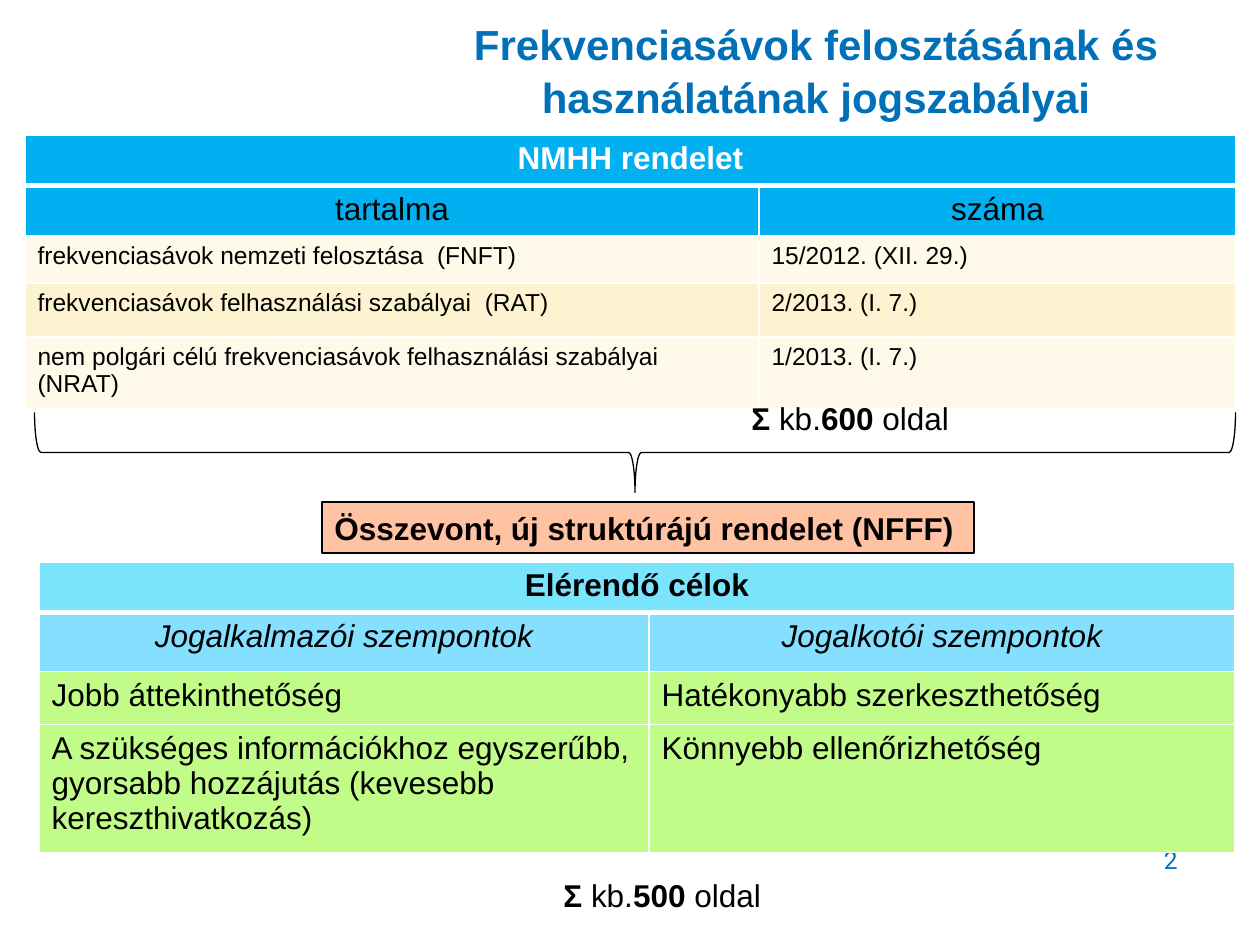
from dataclasses import dataclass
from typing import NamedTuple

from lxml import etree
from pptx import Presentation
from pptx.dml.color import RGBColor
from pptx.enum.shapes import MSO_SHAPE
from pptx.enum.text import MSO_ANCHOR, PP_ALIGN
from pptx.oxml.ns import qn
from pptx.util import Pt

EMU_PER_PX = 914400 / 126
LEFT, CENTER, RIGHT = PP_ALIGN.LEFT, PP_ALIGN.CENTER, PP_ALIGN.RIGHT
MIDDLE, TOP = MSO_ANCHOR.MIDDLE, MSO_ANCHOR.TOP
RECTANGLE, RIGHT_BRACE = MSO_SHAPE.RECTANGLE, MSO_SHAPE.RIGHT_BRACE

BLACK = RGBColor(0x00, 0x00, 0x00)
WHITE = RGBColor(0xFF, 0xFF, 0xFF)
TITLE_BLUE = RGBColor(0x00, 0x70, 0xB8)
HEADER_BLUE = RGBColor(0x00, 0xB0, 0xF0)
CREAM = RGBColor(0xFE, 0xF9, 0xE9)
SAND = RGBColor(0xFD, 0xF3, 0xD1)
CYAN = RGBColor(0x7B, 0xE4, 0xFD)
SKY = RGBColor(0x85, 0xDF, 0xFF)
GREEN = RGBColor(0xC2, 0xFC, 0x88)
PEACH = RGBColor(0xFF, 0xC2, 0xA3)


class Frame(NamedTuple):
    left: int
    top: int
    width: int
    height: int


@dataclass
class TextStyle:
    size: int = 18
    color: RGBColor = BLACK
    bold: bool = False
    italic: bool = False
    align: PP_ALIGN = LEFT
    font: str = "Arial"


@dataclass
class Row:
    height: int
    fill: RGBColor
    style: TextStyle
    texts: tuple[str, ...]


def px(length: float) -> int:
    return round(length * EMU_PER_PX)


def emu(frame: Frame) -> list[int]:
    return [px(length) for length in frame]


def style_paragraph(para, style: TextStyle) -> None:
    para.alignment = style.align
    font = para.font
    font.name, font.size = style.font, Pt(style.size)
    font.bold, font.italic = style.bold, style.italic
    font.color.rgb = style.color


def add_text(slide, frame: Frame, text: str, style: TextStyle,
             anchor: MSO_ANCHOR = TOP, spacing: float = 1.0) -> None:
    box = slide.shapes.add_textbox(*emu(frame)).text_frame
    box.word_wrap = True
    box.vertical_anchor = anchor
    para = box.paragraphs[0]
    para.text = text
    para.line_spacing = spacing
    style_paragraph(para, style)


def add_page_total(slide, left: int, top: int, pages: str) -> None:
    box = slide.shapes.add_textbox(*emu(Frame(left, top, 233, 51))).text_frame
    box.word_wrap = False
    para = box.paragraphs[0]
    style_paragraph(para, TextStyle())
    for text, bold in (("Σ ", True), ("kb.", False),
                       (f"{pages} ", True), ("oldal", False)):
        span = para.add_run()
        span.text = text
        span.font.bold = bold


def add_border(cell, side: str, points: int) -> None:
    line = etree.SubElement(cell._tc.get_or_add_tcPr(), qn(f"a:ln{side}"),
                            w=str(Pt(points)))
    fill = etree.SubElement(line, qn("a:solidFill"))
    etree.SubElement(fill, qn("a:srgbClr"), val=str(WHITE))


def add_table(slide, left: int, top: int, widths: tuple[int, ...],
              rows: list[Row]) -> None:
    """Draw a table whose first row is one merged heading."""
    frame = Frame(left, top, sum(widths), sum(row.height for row in rows))
    table = slide.shapes.add_table(len(rows), len(widths), *emu(frame)).table
    table.first_row = table.horz_banding = False
    for column, width in zip(table.columns, widths):
        column.width = px(width)
    table.cell(0, 0).merge(table.cell(0, len(widths) - 1))
    for index, row in enumerate(rows):
        table.rows[index].height = px(row.height)
        for cell in table.rows[index].cells:
            for side in "LRTB":
                thick = (index, side) in ((0, "B"), (1, "T"))
                add_border(cell, side, 3 if thick else 1)
            cell.fill.solid()
            cell.fill.fore_color.rgb = row.fill
        for column, text in enumerate(row.texts):
            para = table.cell(index, column).text_frame.paragraphs[0]
            para.text = text
            style_paragraph(para, row.style)


def add_outlined_shape(slide, kind: MSO_SHAPE, frame: Frame):
    shape = slide.shapes.add_shape(kind, *emu(frame))
    shape.shadow.inherit = False
    shape.line.color.rgb = BLACK
    shape.line.width = Pt(0.75)
    return shape


def add_merged_decree(slide) -> None:
    box = add_outlined_shape(slide, RECTANGLE, Frame(322, 502, 652, 51))
    box.fill.solid()
    box.fill.fore_color.rgb = PEACH
    box.text_frame.word_wrap = False
    para = box.text_frame.paragraphs[0]
    para.text = "Összevont, új struktúrájú rendelet (NFFF)"
    style_paragraph(para, TextStyle(bold=True))


def add_brace(slide) -> None:
    brace = add_outlined_shape(slide, RIGHT_BRACE, Frame(595, -148, 80, 1201))
    brace.fill.background()
    brace.rotation = 90
    brace.adjustments[0] = 0.08
    brace.adjustments[1] = 0.5


def main() -> None:
    deck = Presentation()
    deck.slide_width, deck.slide_height = px(1260), px(945)
    slide = deck.slides.add_slide(deck.slide_layouts[6])

    add_text(slide, Frame(372, 29, 888, 79),
             "Frekvenciasávok felosztásának és használatának jogszabályai",
             TextStyle(24, TITLE_BLUE, bold=True, align=CENTER), MIDDLE, 1.05)
    add_text(slide, Frame(896, 839, 294, 66), "2",
             TextStyle(14, TITLE_BLUE, align=RIGHT, font="Roboto"))

    centered = TextStyle(align=CENTER)
    small = TextStyle(14)
    add_table(slide, 25, 135, (734, 477), [
        Row(42, HEADER_BLUE, TextStyle(color=WHITE, bold=True, align=CENTER),
            ("NMHH rendelet",)),
        Row(42, HEADER_BLUE, centered, ("tartalma", "száma")),
        Row(47, CREAM, small, ("frekvenciasávok nemzeti felosztása  (FNFT)",
                               "15/2012. (XII. 29.)")),
        Row(54, SAND, small, ("frekvenciasávok felhasználási szabályai  (RAT)",
                              "2/2013. (I. 7.)")),
        Row(54, CREAM, small,
            ("nem polgári célú frekvenciasávok felhasználási szabályai (NRAT)",
             "1/2013. (I. 7.)")),
    ])
    add_merged_decree(slide)
    add_page_total(slide, 739, 393, "600")
    add_brace(slide)

    body = TextStyle()
    add_table(slide, 39, 562, (610, 586), [
        Row(21, CYAN, TextStyle(bold=True, align=CENTER), ("Elérendő célok",)),
        Row(59, SKY, TextStyle(italic=True, align=CENTER),
            ("Jogalkalmazói szempontok", "Jogalkotói szempontok")),
        Row(53, GREEN, body,
            ("Jobb áttekinthetőség", "Hatékonyabb szerkeszthetőség")),
        Row(128, GREEN, body,
            ("A szükséges információkhoz egyszerűbb, gyorsabb hozzájutás "
             "(kevesebb kereszthivatkozás)", "Könnyebb ellenőrizhetőség")),
    ])
    add_page_total(slide, 551, 870, "500")
    deck.save("out.pptx")


if __name__ == "__main__":
    main()
